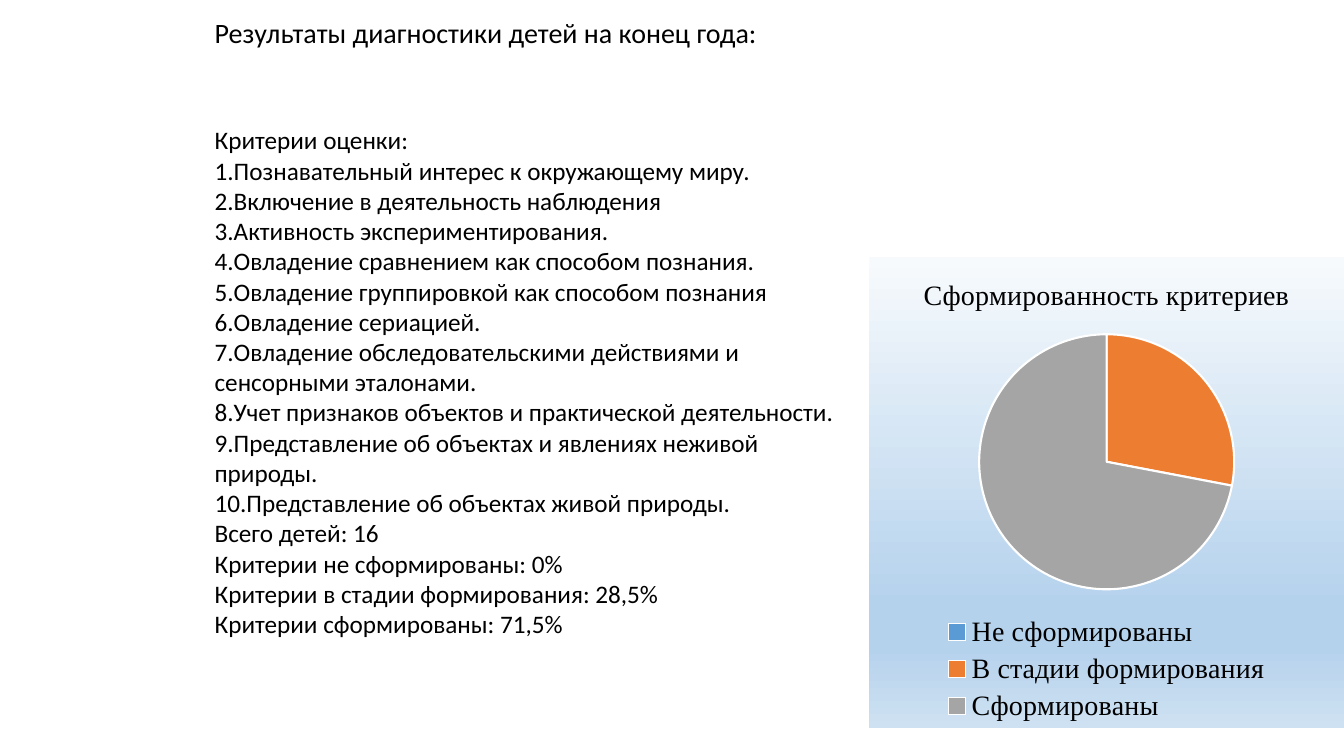
from lxml import etree
from pptx import Presentation
from pptx.chart.data import CategoryChartData
from pptx.dml.color import RGBColor
from pptx.enum.chart import XL_CHART_TYPE, XL_LEGEND_POSITION
from pptx.oxml import parse_xml
from pptx.oxml.ns import nsdecls, qn
from pptx.util import Pt

PIE = XL_CHART_TYPE.PIE
BOTTOM = XL_LEGEND_POSITION.BOTTOM
PX = 9525
BODY_FONT = "Calibri"
CHART_FONT = "Times New Roman"
COLORS = {
    "text": "000000",
    "border": "FFFFFF",
    "not_formed": "5B9BD5",
    "in_progress": "ED7D31",
    "formed": "A5A5A5",
    "sky": "F7FAFD",
    "blue": "B5D2EC",
    "pale": "CEE1F2",
}
BACKDROP = [(0, "sky"), (74, "blue"), (83, "blue"), (100, "pale")]
HEADING = "Результаты диагностики детей на конец года:"
CRITERIA = [
    "Познавательный интерес к окружающему миру.",
    "Включение в деятельность наблюдения",
    "Активность экспериментирования.",
    "Овладение сравнением как способом познания.",
    "Овладение группировкой как способом познания",
    "Овладение сериацией.",
    "Овладение обследовательскими действиями и сенсорными эталонами.",
    "Учет признаков объектов и практической деятельности.",
    "Представление об объектах и явлениях неживой природы.",
    "Представление об объектах живой природы.",
]
TOTALS = [
    "Всего детей: 16",
    "Критерии не сформированы: 0%",
    "Критерии в стадии формирования: 28,5%",
    "Критерии сформированы: 71,5%",
]
CHART_TITLE = "Сформированность критериев"
SHARES = [
    ("Не сформированы", 0, "not_formed"),
    ("В стадии формирования", 28, "in_progress"),
    ("Сформированы", 72, "formed"),
]


def emu(box):
    """Turn a box in px into EMU."""
    return [length * PX for length in box]


def style_font(font, face, size):
    """Set face, size and text colour of a font."""
    font.name = face
    font.size = Pt(size)
    font.bold = False
    font.color.rgb = RGBColor.from_string(COLORS["text"])


def add_text(slide, box, lines, size):
    """Write the lines as paragraphs in the box."""
    frame = slide.shapes.add_textbox(*emu(box)).text_frame
    frame.word_wrap = True
    frame.text = "\n".join(lines)
    for paragraph in frame.paragraphs:
        for run in paragraph.runs:
            style_font(run.font, BODY_FONT, size)


def add_backdrop(chart):
    """Fill the chart area with a vertical gradient."""
    properties = parse_xml(
        f'<c:spPr {nsdecls("c", "a")}><a:gradFill><a:gsLst/>'
        '<a:lin ang="5400000" scaled="0"/></a:gradFill>'
        "<a:ln><a:noFill/></a:ln></c:spPr>"
    )
    stops = properties.find(".//" + qn("a:gsLst"))
    for percent, color in BACKDROP:
        stop = etree.SubElement(stops, qn("a:gs"), pos=str(percent * 1000))
        etree.SubElement(stop, qn("a:srgbClr"), val=COLORS[color])
    chart.element.find(qn("c:chart")).addnext(properties)


def add_results_chart(slide, box):
    """Draw the pie of formed criteria in the box."""
    data = CategoryChartData()
    data.categories = [label for label, _, _ in SHARES]
    data.add_series(CHART_TITLE, [share for _, share, _ in SHARES])
    chart = slide.shapes.add_chart(PIE, *emu(box), data).chart
    style_font(chart.font, BODY_FONT, 10)
    chart.has_title = True
    title = chart.chart_title.text_frame
    title.text = CHART_TITLE
    style_font(title.paragraphs[0].runs[0].font, CHART_FONT, 20)
    chart.has_legend = True
    chart.legend.position = BOTTOM
    chart.legend.include_in_layout = False
    style_font(chart.legend.font, CHART_FONT, 20)
    pie = chart.plots[0]
    pie.vary_by_categories = True
    for index, (_, _, color) in enumerate(SHARES):
        wedge = pie.series[0].points[index].format
        wedge.fill.solid()
        wedge.fill.fore_color.rgb = RGBColor.from_string(COLORS[color])
        wedge.line.color.rgb = RGBColor.from_string(COLORS["border"])
        wedge.line.width = Pt(1.5)
    add_backdrop(chart)


def main():
    """Build and save the slide."""
    deck = Presentation()
    deck.slide_width, deck.slide_height = emu((1280, 720))
    slide = deck.slides.add_slide(deck.slide_layouts[6])
    numbered = [f"{number}.{name}" for number, name in enumerate(CRITERIA, 1)]
    add_text(slide, (195, 10, 749, 42), [HEADING], 20)
    add_text(slide, (195, 114, 633, 563), ["Критерии оценки:", *numbered, *TOTALS], 18)
    add_results_chart(slide, (828, 245, 452, 448))
    deck.save("out.pptx")


if __name__ == "__main__":
    main()
